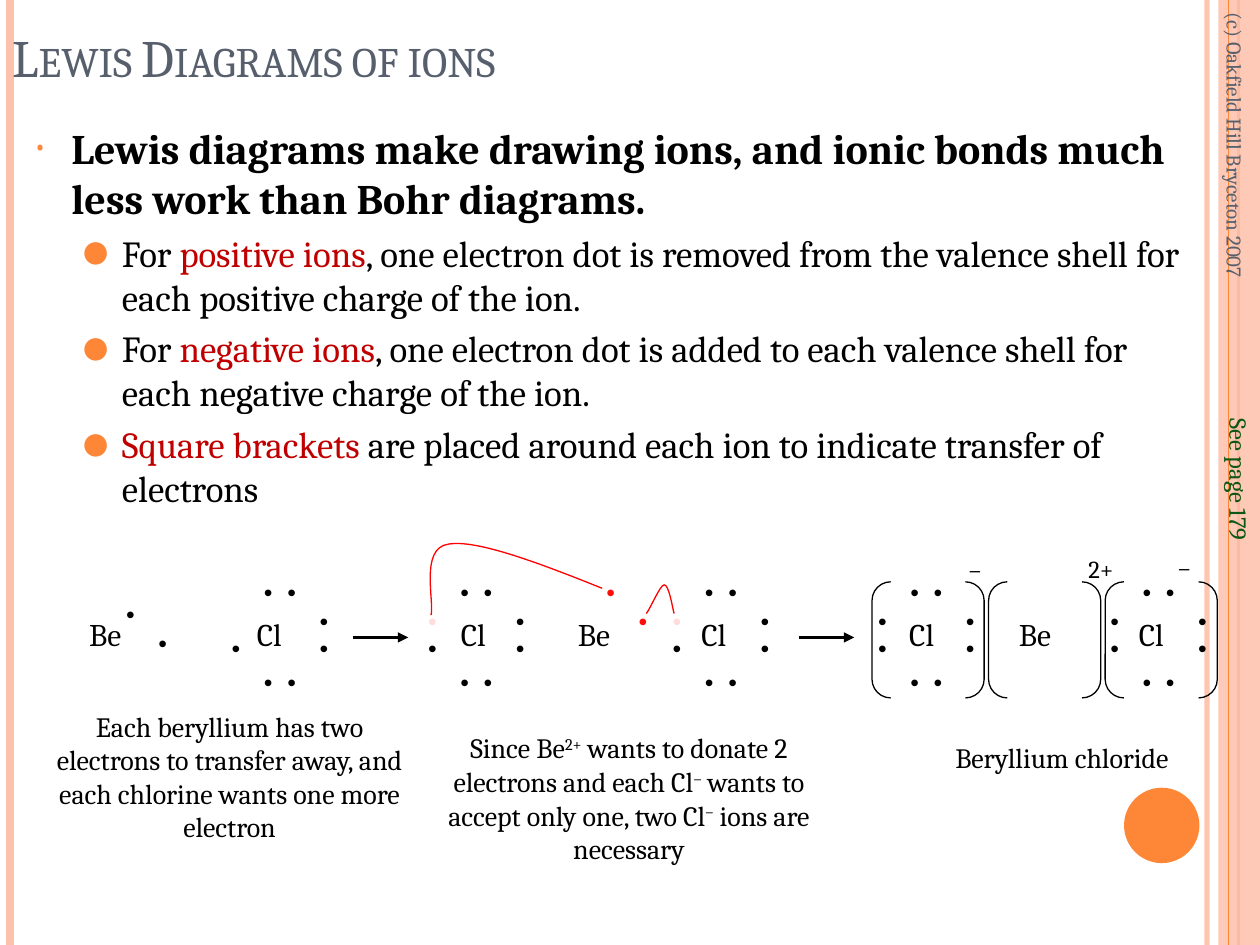
from dataclasses import dataclass
from lxml.etree import SubElement
from pptx import Presentation
from pptx.dml.color import RGBColor
from pptx.enum.shapes import MSO_CONNECTOR, MSO_SHAPE as Shape
from pptx.enum.text import MSO_ANCHOR as Anchor, PP_ALIGN as Align
from pptx.oxml.ns import qn
from pptx.util import Cm, Pt


@dataclass(frozen=True)
class Theme:
    font: str = "Cambria"
    dot_font: str = "Courier New"
    ink: str = "000000"
    slate: str = "575F6D"
    green: str = "0D5613"
    key: str = "C00000"
    orange: str = "FE8637"
    peach: str = "FEC2AC"
    moved: str = "FF0C0B"
    gained: str = "FFDDDC"
    curve: str = "FF0000"
    title: int = 30
    lead: int = 24
    point: int = 21
    symbol: int = 18
    caption: int = 16
    small: int = 14
    credit: int = 12


T = Theme()
W, H = 25.4, 19.05

TITLE = "Lewis Diagrams of ions"
LEAD = "Lewis diagrams make drawing ions, and ionic bonds much less work than Bohr diagrams."
POINTS = [
    [("For ", T.ink), ("positive ions", T.key),
     (", one electron dot is removed from the valence shell for each positive charge of the ion.", T.ink)],
    [("For ", T.ink), ("negative ions", T.key),
     (", one electron dot is added to each valence shell for each negative charge of the ion.", T.ink)],
    [("Square brackets ", T.key),
     ("are placed around each ion to indicate transfer of electrons", T.ink)],
]
# Side labels: text, left, top, width, height, size, colour, alignment, anchor
SIDE_LABELS = [
    ("(c) Oakfield Hill Bryceton 2007", 20.45, 3.94, 8.89, 1.02, T.credit, T.slate, Align.LEFT, Anchor.MIDDLE),
    ("See page 179", 22.58, 8.33, 4.8, 0.84, T.small, T.green, Align.RIGHT, Anchor.TOP),
]
# Upright lines: x, colour, points, opacity in percent
RULES_BEHIND = [(24.33, T.peach, 3, 93), (0.21, T.peach, 4.5, 100), (24.97, T.orange, 1.5, 100)]
RULES_FRONT = [(24.77, T.orange, 0.75, 100)]

# Electron rows are top, upper side, lower side, bottom; each holds a left and a right dot
DOT_COLORS = {"k": T.ink, "r": T.moved, "p": T.gained}
FULL = "kk kk kk kk"
# symbol, symbol left, dots left, dots top, electrons
ATOMS = [
    ("Be", 1.55, 0.99, 12.07, ".k .k"),
    ("Cl", 4.93, 4.24, 11.63, "kk .k kk kk"),
    ("Cl", 9.04, 8.2, 11.63, "kk pk kk kk"),
    ("Be", 11.4, 10.67, 11.63, ".r .r"),
    ("Cl", 13.89, 13.13, 11.63, "kk pk kk kk"),
    ("Cl", 18.08, 17.27, 11.63, FULL),
    ("Be", 20.29, None, None, ""),
    ("Cl", 22.71, 21.95, 11.63, FULL),
]
CHARGES = [("–", 19.28, 11.05), ("2+", 21.69, 11.05), ("–", 23.5, 11)]
CAPTIONS = [
    (0.64, 14.17, 2.97, "Each beryllium has two electrons to transfer away, "
                        "and each chlorine wants one more electron"),
    (8.69, 14.61, 2.97, "Since Be^2+^ wants to donate 2 electrons and each Cl^–^ wants to "
                        "accept only one, two Cl^–^ ions are necessary"),
    (17.42, 14.81, 0.94, "Beryllium chloride"),
]
ARROW_STARTS = [7.11, 16.1]
# Bezier curves: a start, then three points for each segment
TRANSFERS = [
    [(12.14, 11.86), (10.87, 11.35), (9.6, 10.87), (9.04, 10.97),
     (8.46, 11.05), (8.76, 12.12), (8.69, 12.4)],
    [(13.03, 12.37), (13.11, 12.27), (13.31, 11.79), (13.39, 11.79),
     (13.49, 11.79), (13.56, 12.27), (13.59, 12.37)],
]
SIDE_TABS, PAIR_TABS = (0.27, 2.04), (0.92, 1.39)


def rgb(color):
    return RGBColor.from_string(color)


def set_opacity(fill_parent, percent):
    if percent < 100:
        clr = next(fill_parent.iter(qn("a:srgbClr")))
        SubElement(clr, qn("a:alpha"), val=str(percent * 1000))


def add_line(x1, y1, x2, y2, color, width, opacity=100, arrow=False):
    sp = shapes.add_connector(MSO_CONNECTOR.STRAIGHT, Cm(x1), Cm(y1), Cm(x2), Cm(y2))
    sp.line.color.rgb = rgb(color)
    sp.line.width = Pt(width)
    ln = sp.line._get_or_add_ln()
    set_opacity(ln, opacity)
    if arrow:
        SubElement(ln, qn("a:tailEnd"), type="triangle")
    SubElement(sp._element.spPr, qn("a:effectLst"))


def add_filled(kind, x, y, w, h, color, opacity=100):
    sp = shapes.add_shape(kind, Cm(x), Cm(y), Cm(w), Cm(h))
    sp.shadow.inherit = False
    sp.fill.solid()
    sp.fill.fore_color.rgb = rgb(color)
    set_opacity(sp._element.spPr, opacity)
    sp.line.fill.background()


def outline(sp, color):
    sp.shadow.inherit = False
    sp.fill.background()
    sp.line.color.rgb = rgb(color)
    sp.line.width = Pt(0.75)


def add_run(p, text, size, color=T.ink, font=T.font, bold=False):
    r = p.add_run()
    r.text = text
    r.font.name, r.font.size, r.font.bold = font, Pt(size), bold
    r.font.color.rgb = rgb(color)
    return r


def add_box(x, y, w, h, anchor=Anchor.TOP):
    sp = shapes.add_textbox(Cm(x), Cm(y), Cm(w), Cm(h))
    sp.text_frame.word_wrap = True
    sp.text_frame.vertical_anchor = anchor
    return sp


def add_label(text, x, y, w, h, size, color=T.ink, align=Align.LEFT, anchor=Anchor.TOP):
    """Add one paragraph; text between carets is raised."""
    sp = add_box(x, y, w, h, anchor)
    p = sp.text_frame.paragraphs[0]
    p.alignment = align
    for i, part in enumerate(text.split("^")):
        r = add_run(p, part, size, color)
        if i % 2:
            r.font._element.set("baseline", "30000")
    return sp


def set_bullet(p, char, percent, margin, indent):
    pPr = p._p.get_or_add_pPr()
    pPr.set("marL", str(Cm(margin)))
    pPr.set("indent", str(Cm(indent)))
    SubElement(SubElement(pPr, qn("a:buClr")), qn("a:srgbClr"), val=T.orange)
    SubElement(pPr, qn("a:buSzPct"), val=str(percent * 1000))
    SubElement(pPr, qn("a:buFont"), typeface=T.font)
    SubElement(pPr, qn("a:buChar"), char=char)


def add_electrons(x, y, electrons):
    tf = add_box(x, y, 2.82, 2.67).text_frame
    for i, row in enumerate(electrons.split()):
        p = tf.paragraphs[0] if i == 0 else tf.add_paragraph()
        on_side = i in (1, 2)
        p.line_spacing = 0.5 if on_side else 0.8
        p.space_before = Pt(7 if i else 0)
        tabs = SubElement(p._p.get_or_add_pPr(), qn("a:tabLst"))
        for pos in SIDE_TABS if on_side else PAIR_TABS:
            SubElement(tabs, qn("a:tab"), pos=str(Cm(pos)), algn="ctr")
        for dot in row:
            add_run(p, "\t" if dot == "." else "\t•", T.small, DOT_COLORS.get(dot, T.ink), T.dot_font)


def add_curve(points):
    """Build the control polygon, then turn each three points into a Bezier segment."""
    (x, y), *rest = [(Cm(a), Cm(b)) for a, b in points]
    builder = shapes.build_freeform(x, y)
    builder.add_line_segments(rest, close=False)
    sp = builder.convert_to_shape()
    outline(sp, T.curve)
    path = next(sp._element.iter(qn("a:path")))
    steps = path.findall(qn("a:lnTo"))
    for i in range(0, len(steps), 3):
        bezier = SubElement(path, qn("a:cubicBezTo"))
        for step in steps[i:i + 3]:
            bezier.append(step[0])
            path.remove(step)


prs = Presentation()
prs.slide_width, prs.slide_height = Cm(W), Cm(H)
shapes = prs.slides.add_slide(prs.slide_layouts[6]).shapes

for x, *style in RULES_BEHIND:
    add_line(x, 0, x, H, *style)
add_filled(Shape.RECTANGLE, 24.56, 0, 0.84, H, T.peach, 87)
for x, *style in RULES_FRONT:
    add_line(x, 0, x, H, *style)
add_filled(Shape.OVAL, 22.66, 15.88, 1.52, 1.52, T.orange)

title = add_label(TITLE, 0, 0, 20.32, 1.91, T.title, T.slate, anchor=Anchor.BOTTOM)
title.text_frame.paragraphs[0].runs[0].font._element.set("cap", "small")

tf = add_box(0.43, 2.34, 23.7, 8.46).text_frame
add_run(tf.paragraphs[0], LEAD, T.lead, bold=True)
set_bullet(tf.paragraphs[0], "•", 70, 0.76, -0.76)
for point in POINTS:
    p = tf.add_paragraph()
    p.level = 1
    p.space_before = Pt(4.2)
    set_bullet(p, "●", 80, 1.78, -0.79)
    for text, color in point:
        add_run(p, text, T.point, color)

for label in SIDE_LABELS:
    add_label(*label).rotation = 90
for symbol, x, dots_x, dots_y, electrons in ATOMS:
    add_label(symbol, x, 12.27, 1.7, 1.27, T.symbol)
    if electrons:
        add_electrons(dots_x, dots_y, electrons)
for x in ARROW_STARTS:
    add_line(x, 12.85, x + 1.12, 12.85, T.ink, 1.5, arrow=True)
for points in TRANSFERS:
    add_curve(points)
for i in range(3):
    outline(shapes.add_shape(Shape.DOUBLE_BRACKET, Cm(17.58 + 2.35 * i), Cm(11.73), Cm(2.26), Cm(2.34)), T.ink)
for x, y, h, text in CAPTIONS:
    add_label(text, x, y, 7.98, h, T.caption, align=Align.CENTER)
for text, x, y in CHARGES:
    add_label(text, x, y, 1.37, 0.84, T.small)

prs.save("out.pptx")
